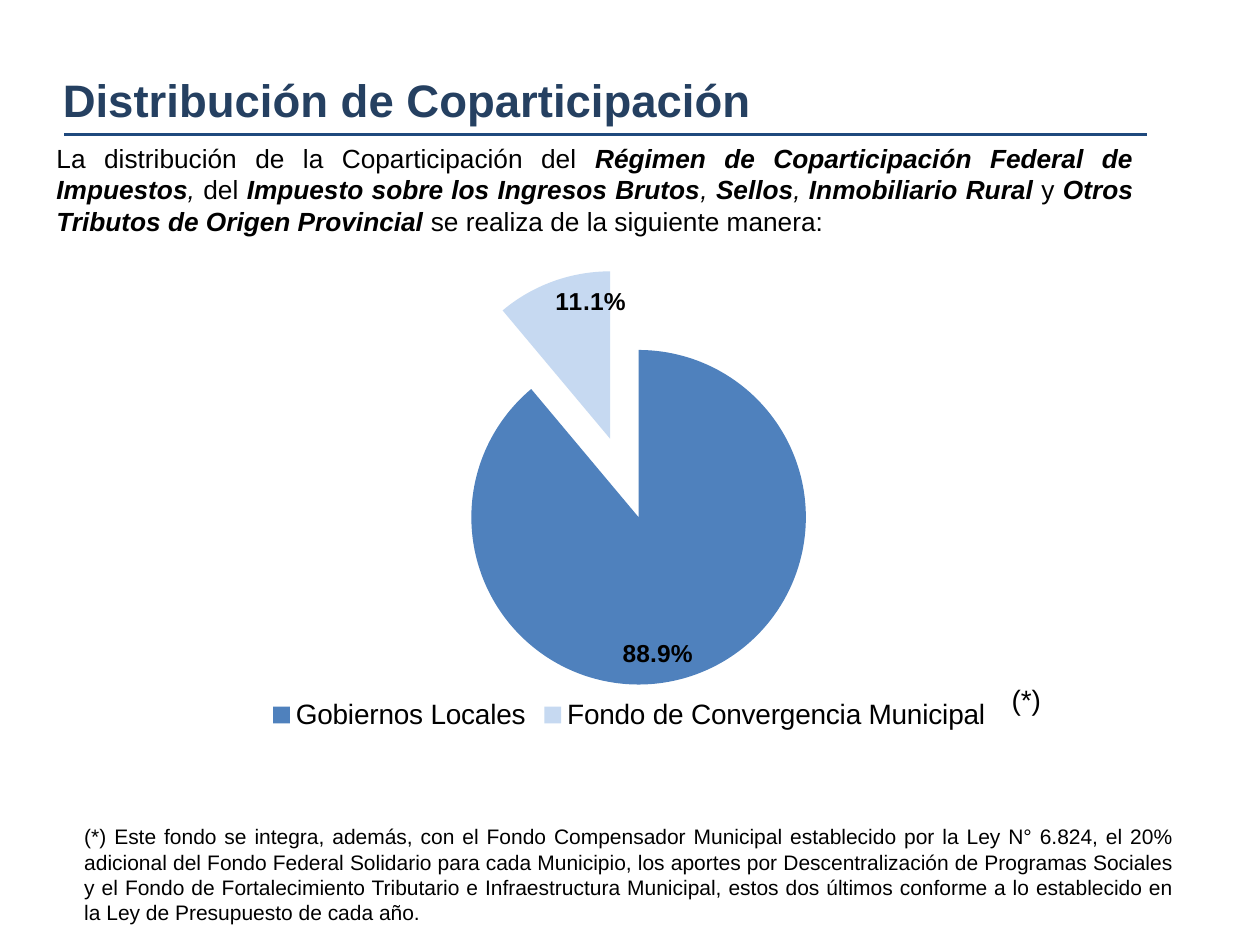
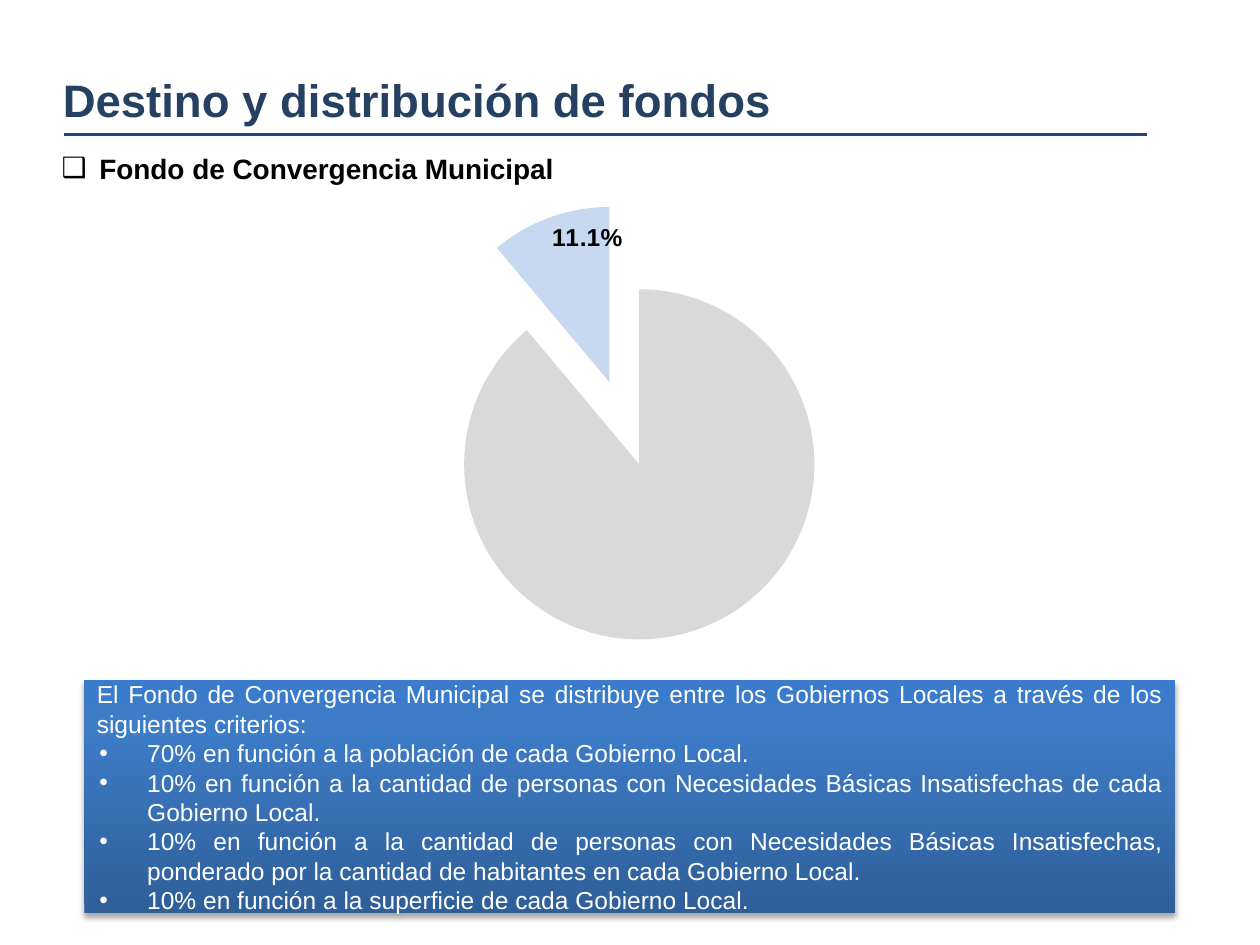
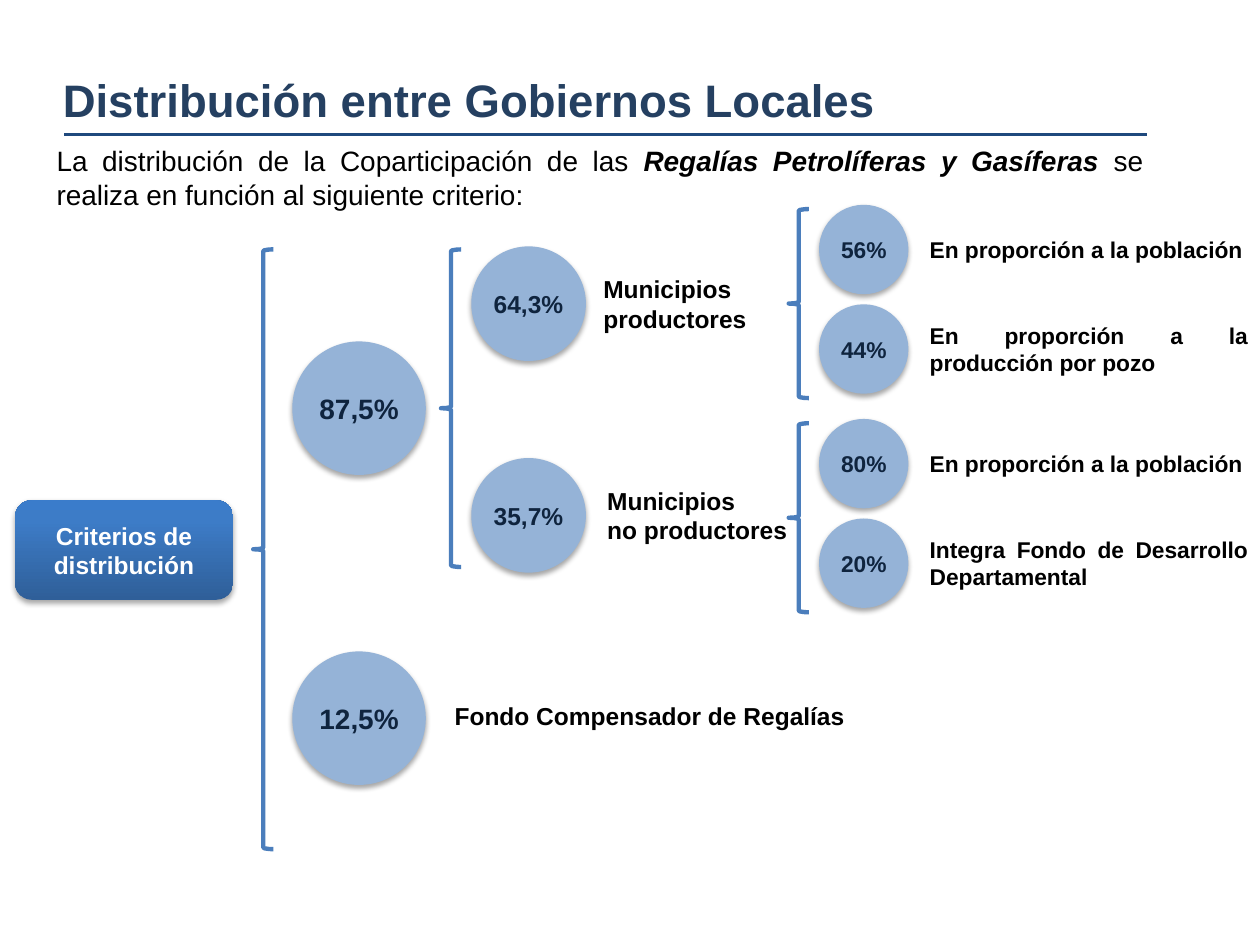
from lxml.etree import SubElement as Sub
from pptx import Presentation
from pptx.chart.data import CategoryChartData as Data
from pptx.dml.color import RGBColor as RGB
from pptx.enum.chart import XL_CHART_TYPE as Kind, XL_LABEL_POSITION as Spot, XL_LEGEND_POSITION as Side
from pptx.enum.shapes import MSO_CONNECTOR as Conn, MSO_SHAPE as Form
from pptx.enum.text import MSO_ANCHOR as Anchor, PP_ALIGN as Align
from pptx.oxml.ns import qn
from pptx.util import Inches, Pt

HUES = {
    "ink": "000000", "white": "FFFFFF", "title": "254061", "rule": "1F497D",
    "blue": "4F81BD", "pale": "C6D9F1", "gray": "D9D9D9", "disc": "95B3D7",
    "num": "0F243E", "brace": "4B7EBC",
}
GRAD = [(0, "2F5F99"), (80, "3D7CC7"), (100, "3A7CCB")]
FONT = "Arial"
SHARES = [88.9, 11.1]

SPLIT = {
    "title": "Distribución de Coparticipación",
    "intro": [
        ("La distribución de la Coparticipación del ", ""),
        ("Régimen de Coparticipación Federal de Impuestos", "bi"), (", ", "i"), ("del ", ""),
        ("Impuesto sobre los Ingresos Brutos", "bi"), (", ", "i"),
        ("Sellos", "bi"), (", ", "i"), ("Inmobiliario Rural ", "bi"), ("y ", ""),
        ("Otros Tributos de Origen Provincial ", "bi"),
        ("se realiza de la siguiente manera:", ""),
    ],
    "cats": ["Gobiernos Locales", "Fondo de Convergencia Municipal"],
    "mark": "(*)",
    "note": "(*) Este fondo se integra, además, con el Fondo Compensador Municipal establecido por la Ley N° 6.824, el 20% adicional del Fondo Federal Solidario para cada Municipio, los aportes por Descentralización de Programas Sociales y el Fondo de Fortalecimiento Tributario e Infraestructura Municipal, estos dos últimos conforme a lo establecido en la Ley de Presupuesto de cada año.",
}
FUND = {
    "title": "Destino y distribución de fondos",
    "head": "Fondo de Convergencia Municipal",
    "lead": "El Fondo de Convergencia Municipal se distribuye entre los Gobiernos Locales a través de los siguientes criterios:",
    "rules": [
        "70% en función a la población de cada Gobierno Local.",
        "10% en función a la cantidad de personas con Necesidades Básicas Insatisfechas de cada Gobierno Local.",
        "10% en función a la cantidad de personas con Necesidades Básicas Insatisfechas, ponderado por la cantidad de habitantes en cada Gobierno Local.",
        "10% en función a la superficie de cada Gobierno Local.",
    ],
}
TREE = {
    "title": "Distribución entre Gobiernos Locales",
    "intro": [
        ("La distribución de la Coparticipación de las ", ""),
        ("Regalías Petrolíferas y Gasíferas ", "bi"),
        ("se realiza en función al siguiente criterio:", ""),
    ],
    "root": "Criterios de distribución",
    "main": ["87,5%", "12,5%"],
    "fund": "Fondo Compensador de Regalías",
    "towns": [
        ("64,3%", ["Municipios productores"], 4.69, [
            ("56%", "En proporción a la población", 1),
            ("44%", "En proporción a la producción por pozo", 2)]),
        ("35,7%", ["Municipios", "no productores"], 4.72, [
            ("80%", "En proporción a la población", 1),
            ("20%", "Integra Fondo de Desarrollo Departamental", 2)]),
    ],
}


def tint(name):
    return RGB.from_string(HUES[name])


def write(shape, paras, size, hue="ink", bold=False, align=Align.JUSTIFY, anchor=Anchor.TOP):
    frame = shape.text_frame
    frame.word_wrap = True
    frame.vertical_anchor = anchor
    for n, (runs, mark, dent) in enumerate(paras):
        para = frame.add_paragraph() if n else frame.paragraphs[0]
        para.alignment = align
        if mark:
            left, hang = dent
            prop = para._p.get_or_add_pPr()
            prop.set("marL", str(Inches(left)))
            prop.set("indent", str(Inches(hang)))
            Sub(prop, qn("a:buFont"), typeface=FONT)
            Sub(prop, qn("a:buChar"), char=mark)
        for text, style in runs:
            run = para.add_run()
            run.text = text
            font = run.font
            font.name, font.size = FONT, Pt(size)
            font.bold = bold or "b" in style
            font.italic = "i" in style
            font.color.rgb = tint(hue)


def plain(text, mark="", dent=None):
    return [(text, "")], mark, dent


def label(slide, box, paras, size, **look):
    write(slide.shapes.add_textbox(*map(Inches, box)), paras, size, **look)


def solid(slide, form, box, hue=None):
    shape = slide.shapes.add_shape(form, *map(Inches, box))
    shape.line.fill.background()
    if hue:
        shape.fill.solid()
        shape.fill.fore_color.rgb = tint(hue)
    else:
        shape.fill.gradient()
        shape.fill.gradient_angle = 90
        stops = shape.element.spPr.find(".//" + qn("a:gsLst"))
        for old in list(stops):
            stops.remove(old)
        for pos, code in GRAD:
            stop = Sub(stops, qn("a:gs"), pos=str(pos * 1000))
            Sub(stop, qn("a:srgbClr"), val=code)
    shape.shadow.inherit = False
    glow = Sub(shape.element.spPr.find(qn("a:effectLst")), qn("a:outerShdw"),
               blurRad=str(Pt(3.1)), dist=str(Pt(1.8)), dir="5400000", rotWithShape="0")
    Sub(Sub(glow, qn("a:srgbClr"), val=HUES["ink"]), qn("a:alpha"), val="35000")
    return shape


def brace(slide, left, top, high):
    shape = slide.shapes.add_shape(Form.LEFT_BRACE, *map(Inches, (left, top, 0.16, high)))
    shape.fill.background()
    shape.line.color.rgb = tint("brace")
    shape.line.width = Pt(2.5)
    shape.shadow.inherit = False


def disc(slide, left, mid, wide, text, size, pad=(0.04, 0.05)):
    shape = solid(slide, Form.OVAL, (left, mid - wide / 2, wide, wide), "disc")
    frame = shape.text_frame
    frame.margin_left = frame.margin_right = Inches(pad[0])
    frame.margin_top = frame.margin_bottom = Inches(pad[1])
    write(shape, [plain(text)], size, "num", True, Align.CENTER, Anchor.MIDDLE)


def tag(slide, left, mid, wide, lines, paras, size):
    high = 0.1 + lines * size / 60
    label(slide, (left, mid - high / 2, wide, high), paras, size, bold=True)


def pie(slide, box, cats, hues, plot, legend=False):
    data = Data()
    data.categories = cats
    data.add_series("Series 1", SHARES)
    chart = slide.shapes.add_chart(Kind.PIE, *map(Inches, box), data).chart
    chart.has_title = False
    chart.font.name, chart.font.size = "Calibri", Pt(10)
    chart.font.color.rgb = tint("ink")
    chart.has_legend = legend
    if legend:
        chart.legend.position = Side.BOTTOM
        chart.legend.include_in_layout = False
        chart.legend.font.name, chart.legend.font.size = FONT, Pt(16)
        chart.legend.font.color.rgb = tint("ink")
    chart.plots[0].vary_by_categories = True
    series = chart.plots[0].series[0]
    for n, hue in enumerate(hues):
        part = series.points[n].format
        part.fill.solid()
        part.fill.fore_color.rgb = tint(hue)
        part.line.fill.background()
    marks = series.data_labels
    marks.show_percentage, marks.show_value = True, False
    marks.number_format, marks.number_format_is_linked = "0.0%", False
    marks.position = Spot.INSIDE_END
    marks.font.name, marks.font.size, marks.font.bold = FONT, Pt(14), True
    marks.font.color.rgb = tint("ink")
    ser = series._element
    burst = Sub(ser, qn("c:explosion"), val="25")
    ser.find(qn("c:dPt")).addprevious(burst)
    if not legend:
        block = ser.find(qn("c:dLbls"))
        mute = Sub(block, qn("c:dLbl"))
        Sub(mute, qn("c:idx"), val="0")
        Sub(mute, qn("c:delete"), val="1")
        block.insert(0, mute)
    area = chart._chartSpace.find(".//" + qn("c:plotArea"))
    for old in area.findall(qn("c:layout")):
        area.remove(old)
    lay = Sub(area, qn("c:layout"))
    area.insert(0, lay)
    hand = Sub(lay, qn("c:manualLayout"))
    Sub(hand, qn("c:layoutTarget"), val="inner")
    for key in "xy":
        Sub(hand, qn(f"c:{key}Mode"), val="edge")
    for key, share in zip("xywh", plot):
        Sub(hand, qn(f"c:{key}"), val=str(share))


def start(deck, title):
    slide = deck.slides.add_slide(deck.slide_layouts[6])
    rule = slide.shapes.add_connector(Conn.STRAIGHT, *map(Inches, (0.51, 1.07, 9.1, 1.07)))
    rule.line.color.rgb = tint("rule")
    rule.line.width = Pt(1.5)
    Sub(rule.element.spPr, qn("a:effectLst"))
    label(slide, (0.4, 0.52, 8.82, 0.54), [plain(title)], 26, hue="title", bold=True, align=Align.LEFT)
    return slide


def split(deck):
    slide = start(deck, SPLIT["title"])
    pie(slide, (1.06, 1.98, 7.87, 3.86), SPLIT["cats"], ["blue", "pale"],
        (0, 0.04, 0.99, 0.86), True)
    label(slide, (7.93, 5.37, 0.63, 0.37), [plain(SPLIT["mark"])], 16, align=Align.LEFT)
    label(slide, (0.57, 6.49, 8.85, 0.91), [plain(SPLIT["note"])], 12)
    label(slide, (0.35, 1.08, 8.74, 0.86), [(SPLIT["intro"], "", None)], 15)


def fund(deck):
    slide = start(deck, FUND["title"])
    label(slide, (0.39, 1.15, 8.71, 0.37), [plain(FUND["head"], "❑", (0.3, -0.3))], 16,
          bold=True, align=Align.LEFT)
    panel = solid(slide, Form.RECTANGLE, (0.67, 5.4, 8.66, 1.85))
    paras = [plain(FUND["lead"])] + [plain(t, "•", (0.4, -0.38)) for t in FUND["rules"]]
    write(panel, paras, 14, "white", anchor=Anchor.MIDDLE)
    pie(slide, (1.06, 1.34, 7.87, 4.04), ["1", "2"], ["gray", "pale"], (0, 0.07, 0.99, 0.86))


def tree(deck):
    slide = start(deck, TREE["title"])
    label(slide, (0.35, 1.09, 8.82, 0.64), [(TREE["intro"], "", None)], 16)
    root = solid(slide, Form.ROUNDED_RECTANGLE, (0.12, 3.97, 1.73, 0.79))
    write(root, [plain(TREE["root"])], 14, "white", True, Align.CENTER, Anchor.MIDDLE)
    brace(slide, 2.01, 1.98, 4.76)
    brace(slide, 3.5, 1.98, 2.52)
    for n, text in enumerate(TREE["main"]):
        disc(slide, 2.32, 3.24 + 2.46 * n, 1.06, text, 16, (0, 0))
    tag(slide, 3.51, 5.68, 4.16, 1, [plain(TREE["fund"])], 14)
    for n, (share, name, left, leaves) in enumerate(TREE["towns"]):
        mid = 2.41 + 1.68 * n
        disc(slide, 3.74, mid, 0.91, share, 14)
        tag(slide, left, mid, 1.6 + 0.09 * n, 2, [plain(t) for t in name], 14)
        top = 1.66 + 1.7 * n
        brace(slide, 6.26, top, 1.5)
        for k, (part, text, lines) in enumerate(leaves):
            row = top + 0.32 + 0.79 * k
            disc(slide, 6.5, row, 0.71, part, 13)
            tag(slide, 7.28, row, 2.72, lines, [plain(text)], 13)


def main():
    deck = Presentation()
    deck.slide_width, deck.slide_height = Inches(10), Inches(7.5)
    for build in (split, fund, tree):
        build(deck)
    deck.save("out.pptx")


if __name__ == "__main__":
    main()
